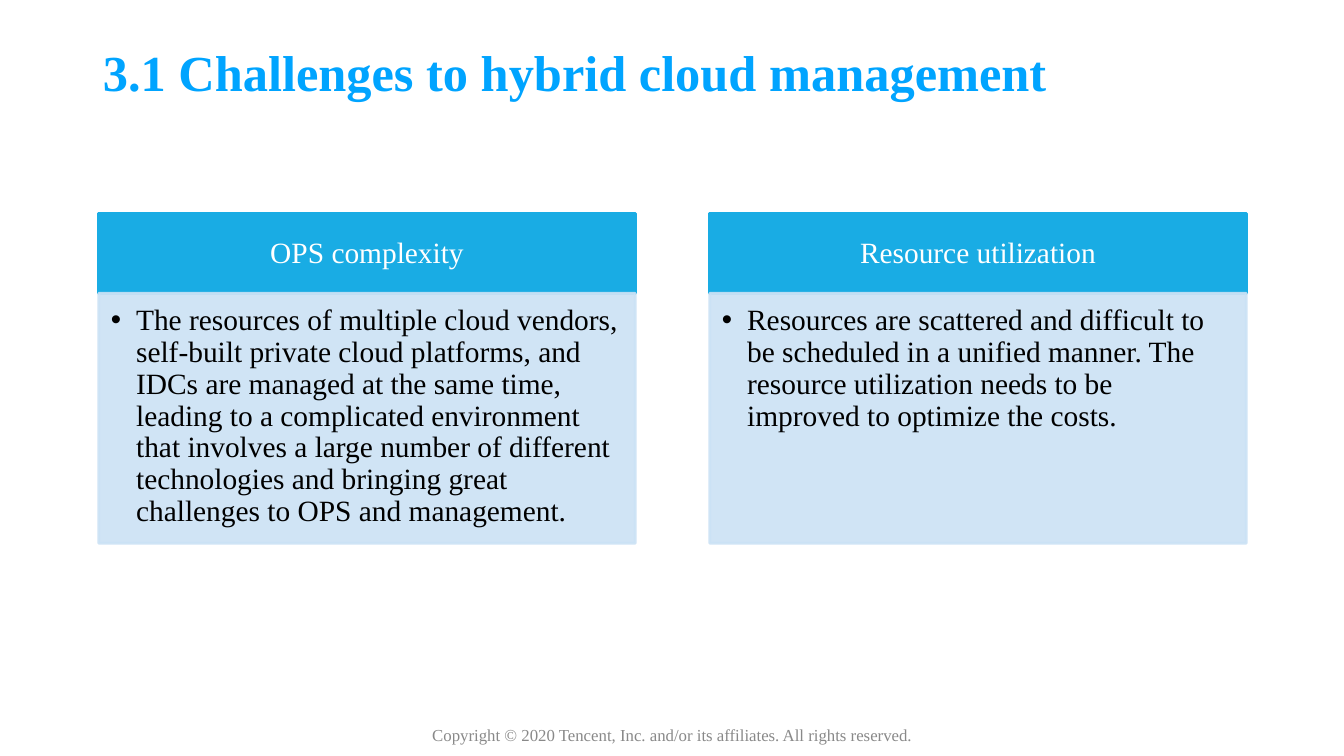
import pptx
import pptx.dml.color
import pptx.enum.text
import pptx.oxml
import pptx.oxml.ns
import pptx.util
from pptx.util import Inches

RGBColor = pptx.dml.color.RGBColor
TITLE_BLUE = RGBColor(0x00, 0xA4, 0xFF)
HEADER_BLUE = RGBColor(0x19, 0xAC, 0xE4)
PANEL_BLUE = RGBColor(0xCB, 0xE2, 0xF5)
WHITE = RGBColor(0xFF, 0xFF, 0xFF)
BLACK = RGBColor(0x00, 0x00, 0x00)
GREY = RGBColor(0x89, 0x89, 0x89)

LEFT = pptx.enum.text.PP_ALIGN.LEFT
CENTER = pptx.enum.text.PP_ALIGN.CENTER
TOP = pptx.enum.text.MSO_ANCHOR.TOP
MIDDLE = pptx.enum.text.MSO_ANCHOR.MIDDLE

COLUMN_LEFT, COLUMN_STEP, COLUMN_WIDTH = 0.98, 6.06, 5.32
HEADER_TOP, HEADER_HEIGHT, PANEL_HEIGHT = 2.12, 0.79, 2.48
COLUMNS = [
    ("OPS complexity",
     "The resources of multiple cloud vendors, self-built private cloud platforms, "
     "and IDCs are managed at the same time, leading to a complicated environment "
     "that involves a large number of different technologies and bringing great "
     "challenges to OPS and management."),
    ("Resource utilization",
     "Resources are scattered and difficult to be scheduled in a unified manner. "
     "The resource utilization needs to be improved to optimize the costs."),
]


def set_values(target, values):
    for name, value in values.items():
        setattr(target, name, value)


class SlideBuilder:
    font_name = "Times New Roman"

    def __init__(self, slide):
        self.slide = slide

    def place(self, shape, left, top, width, height):
        set_values(shape, {"left": Inches(left), "top": Inches(top),
                           "width": Inches(width), "height": Inches(height)})

    def set_text(self, shape, text, size, color, bold=False, alignment=LEFT,
                 anchor=MIDDLE, insets=(0.1, 0.05, 0.1, 0.05), spacing=0.9, bullet=False):
        frame = shape.text_frame
        sides = ("margin_left", "margin_top", "margin_right", "margin_bottom")
        set_values(frame, dict(zip(sides, map(Inches, insets))))
        set_values(frame, {"word_wrap": True, "vertical_anchor": anchor,
                           "auto_size": pptx.enum.text.MSO_AUTO_SIZE.NONE})
        paragraph = frame.paragraphs[0]
        paragraph.text = text
        set_values(paragraph, {"alignment": alignment, "line_spacing": spacing,
                               "space_before": pptx.util.Pt(0)})
        if bullet:
            self.add_bullet(paragraph, color)
        set_values(paragraph.font, {"name": self.font_name, "bold": bold,
                                    "size": pptx.util.Pt(size)})
        paragraph.font.color.rgb = color

    def add_bullet(self, paragraph, color):
        paragraph.level = 1
        properties = paragraph._p.get_or_add_pPr()
        properties.set("marL", str(Inches(0.25)))
        properties.set("indent", str(-Inches(0.25)))
        namespace = pptx.oxml.ns.nsdecls("a")
        for markup in (f'<a:buClr {namespace}><a:srgbClr val="{color}"/></a:buClr>',
                       f'<a:buFont {namespace} typeface="Arial"/>',
                       f'<a:buChar {namespace} char="•"/>'):
            properties.append(pptx.oxml.parse_xml(markup))

    def paint(self, shape, color, opacity=100):
        shape.fill.solid()
        shape.fill.fore_color.rgb = color
        shape.line.color.rgb = color
        shape.line.width = pptx.util.Pt(2)
        if opacity < 100:
            for element in shape._element.spPr.iter(pptx.oxml.ns.qn("a:srgbClr")):
                element.append(pptx.oxml.parse_xml(
                    f'<a:alpha {pptx.oxml.ns.nsdecls("a")} val="{opacity * 1000}"/>'))

    def add_title(self, text):
        title = self.slide.shapes.title
        self.place(title, 0.92, 0.25, 10.74, 0.99)
        self.set_text(title, text, 36, TITLE_BLUE, bold=True)

    def add_column(self, number, heading, body):
        left = COLUMN_LEFT + number * COLUMN_STEP
        header = self.slide.placeholders[2 * number + 1]
        self.place(header, left, HEADER_TOP, COLUMN_WIDTH, HEADER_HEIGHT)
        self.paint(header, HEADER_BLUE)
        self.set_text(header, heading, 21, WHITE, alignment=CENTER,
                      insets=(0.16, 0.09, 0.16, 0.09))
        panel = self.slide.placeholders[2 * number + 2]
        self.place(panel, left, HEADER_TOP + HEADER_HEIGHT, COLUMN_WIDTH, PANEL_HEIGHT)
        self.paint(panel, PANEL_BLUE, opacity=90)
        self.set_text(panel, body, 21, BLACK, anchor=TOP,
                      insets=(0.12, 0.12, 0.16, 0.18), bullet=True)

    def add_copyright(self, text):
        box = self.slide.shapes.add_textbox(
            Inches(4.07), Inches(7.09), Inches(5.2), Inches(0.4))
        self.set_text(box, text, 12, GREY, alignment=CENTER, spacing=1.0)


def main():
    presentation = pptx.Presentation()
    presentation.slide_width = Inches(13.33)
    presentation.slide_height = Inches(7.5)
    comparison_layout = presentation.slide_layouts[4]
    builder = SlideBuilder(presentation.slides.add_slide(comparison_layout))
    builder.add_title("3.1 Challenges to hybrid cloud management")
    for number, (heading, body) in enumerate(COLUMNS):
        builder.add_column(number, heading, body)
    builder.add_copyright(
        "Copyright © 2020 Tencent, Inc. and/or its affiliates. All rights reserved.")
    presentation.save("out.pptx")


if __name__ == "__main__":
    main()
